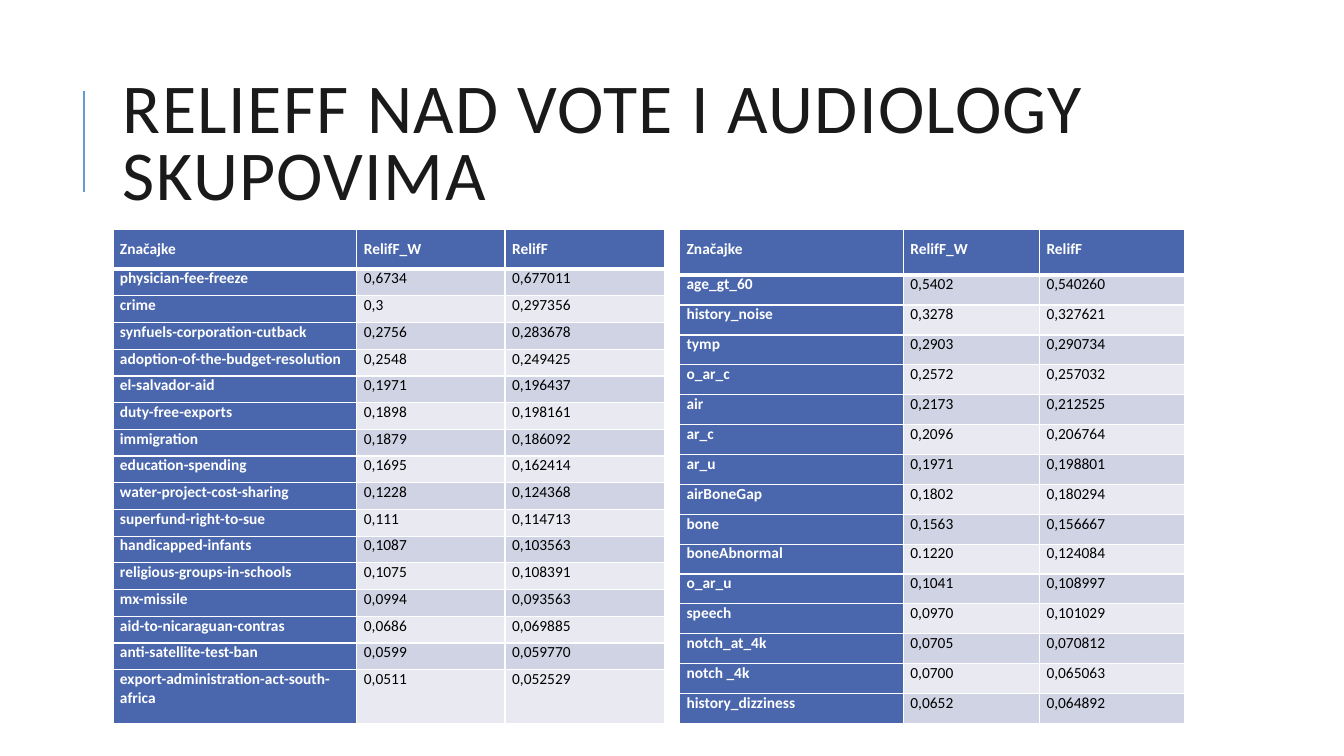
"""Builds a slide with two tables of ReliefF feature weights."""
import lxml.etree
import pptx
import pptx.dml.color
import pptx.enum.shapes
import pptx.enum.text
import pptx.oxml.ns
import pptx.util

PX = 9144
COLORS = {
    "title": "1A1A1A",
    "accent": "629DD1",
    "header": "4A66AC",
    "band_dark": "D0D3E3",
    "band_light": "E9EAF1",
    "white": "FFFFFF",
    "black": "000000",
}
HEADINGS = ("Značajke", "RelifF_W", "RelifF")
VOTE_ROWS = [
    ("physician-fee-freeze", "0,6734", "0,677011"),
    ("crime", "0,3", "0,297356"),
    ("synfuels-corporation-cutback", "0,2756", "0,283678"),
    ("adoption-of-the-budget-resolution", "0,2548", "0,249425"),
    ("el-salvador-aid", "0,1971", "0,196437"),
    ("duty-free-exports", "0,1898", "0,198161"),
    ("immigration", "0,1879", "0,186092"),
    ("education-spending", "0,1695", "0,162414"),
    ("water-project-cost-sharing", "0,1228", "0,124368"),
    ("superfund-right-to-sue", "0,111", "0,114713"),
    ("handicapped-infants", "0,1087", "0,103563"),
    ("religious-groups-in-schools", "0,1075", "0,108391"),
    ("mx-missile", "0,0994", "0,093563"),
    ("aid-to-nicaraguan-contras", "0,0686", "0,069885"),
    ("anti-satellite-test-ban", "0,0599", "0,059770"),
    ("export-administration-act-south-africa", "0,0511", "0,052529"),
]
AUDIOLOGY_ROWS = [
    ("age_gt_60", "0,5402", "0,540260"),
    ("history_noise", "0,3278", "0,327621"),
    ("tymp", "0,2903", "0,290734"),
    ("o_ar_c", "0,2572", "0,257032"),
    ("air", "0,2173", "0,212525"),
    ("ar_c", "0,2096", "0,206764"),
    ("ar_u", "0,1971", "0,198801"),
    ("airBoneGap", "0,1802", "0,180294"),
    ("bone", "0,1563", "0,156667"),
    ("boneAbnormal", "0.1220", "0,124084"),
    ("o_ar_u", "0,1041", "0,108997"),
    ("speech", "0,0970", "0,101029"),
    ("notch_at_4k", "0,0705", "0,070812"),
    ("notch _4k", "0,0700", "0,065063"),
    ("history_dizziness", "0,0652", "0,064892"),
]


def write(tf, text, size, color, bold=False, align=None, spacing=1.0, tracking=None):
    p = tf.paragraphs[0]
    p.alignment = align
    p.line_spacing = spacing
    r = p.add_run()
    r.text = text
    r.font.name = "Calibri"
    r.font.size = pptx.util.Pt(size)
    r.font.bold = bold
    r.font.color.rgb = pptx.dml.color.RGBColor.from_string(COLORS[color])
    if tracking:
        r.font._element.set("spc", str(tracking))


def add_border(cell, index, side, points):
    qn = pptx.oxml.ns.qn
    ln = lxml.etree.Element(qn(f"a:ln{side}"), w=str(pptx.util.Pt(points)))
    fill = lxml.etree.SubElement(ln, qn("a:solidFill"))
    lxml.etree.SubElement(fill, qn("a:srgbClr"), val=COLORS["white"])
    cell._tc.get_or_add_tcPr().insert(index, ln)


prs = pptx.Presentation()
prs.slide_width = 1333 * PX
prs.slide_height = 750 * PX
s = prs.slides.add_slide(prs.slide_layouts[6])

line = s.shapes.add_connector(
    pptx.enum.shapes.MSO_CONNECTOR.STRAIGHT, 83 * PX, 190 * PX, 83 * PX, 90 * PX)
line.line.color.rgb = pptx.dml.color.RGBColor.from_string(COLORS["accent"])
line.line.width = pptx.util.Pt(1.5)
lxml.etree.SubElement(line._element.spPr, pptx.oxml.ns.qn("a:effectLst"))

title = s.shapes.add_textbox(112 * PX, 64 * PX, 1063 * PX, 164 * PX)
title.text_frame.word_wrap = True
title.text_frame.vertical_anchor = pptx.enum.text.MSO_ANCHOR.MIDDLE
write(title.text_frame, "RELIEFF NAD VOTE I AUDIOLOGY SKUPOVIMA", 50, "title",
      spacing=0.8, tracking=100)

TOP, HEIGHT = 228, 490
for left, widths, header_height, last_height, rows in (
    (112, (242, 147, 158), 39, 53, VOTE_ROWS),
    (674, (222, 135, 144), 45, None, AUDIOLOGY_ROWS),
):
    frame = s.shapes.add_table(len(rows) + 1, len(widths), left * PX, TOP * PX,
                               sum(widths) * PX, HEIGHT * PX)
    table = frame.table
    for column, width in zip(table.columns, widths):
        column.width = width * PX

    even_rows = len(rows) - bool(last_height)
    row_height = (HEIGHT - header_height - (last_height or 0)) * PX // even_rows
    for row in table.rows:
        row.height = row_height
    table.rows[0].height = header_height * PX
    if last_height:
        table.rows[len(rows)].height = last_height * PX

    for i, values in enumerate([HEADINGS, *rows]):
        for j, value in enumerate(values):
            cell = table.cell(i, j)
            cell.margin_left = cell.margin_right = 7 * PX
            cell.margin_top = cell.margin_bottom = 0
            is_head = i == 0 or j == 0
            fill = "header" if is_head else ("band_light", "band_dark")[i % 2]
            cell.fill.solid()
            cell.fill.fore_color.rgb = pptx.dml.color.RGBColor.from_string(COLORS[fill])
            points = {"L": 1, "R": 1, "T": 3 if i == 1 else 1, "B": 3 if i == 0 else 1}
            for index, side in enumerate(points):
                add_border(cell, index, side, points[side])
            write(cell.text_frame, value, 11, "white" if is_head else "black",
                  bold=is_head, align=pptx.enum.text.PP_ALIGN.JUSTIFY,
                  spacing=1.5 if i == 0 else 1.0)

prs.save("out.pptx")
